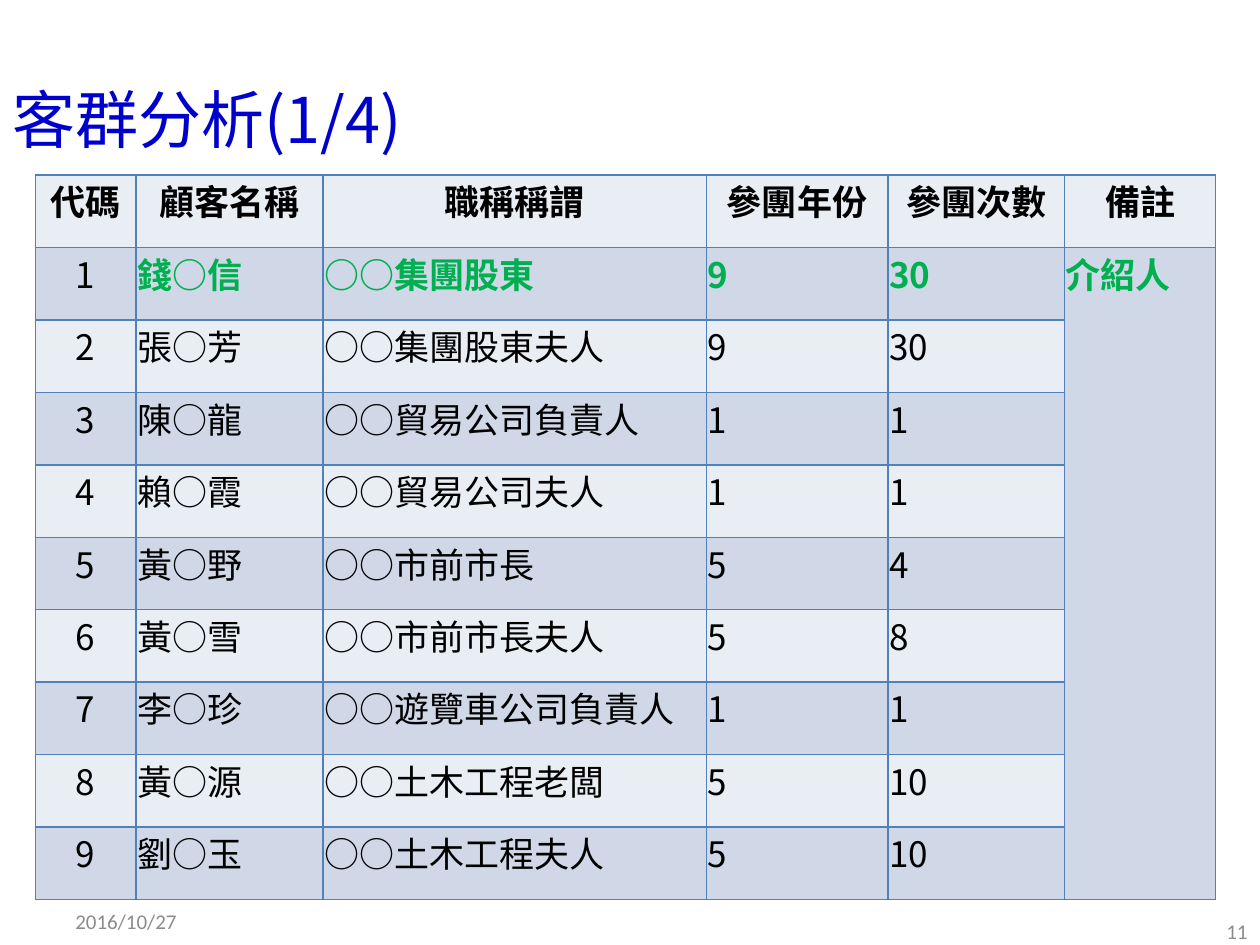
import pptx
import pptx.util
import pptx.dml.color
import pptx.enum.text
import pptx.oxml.ns
import lxml.etree

COLORS = {
    "title": "0000CC",
    "text": "000000",
    "accent": "00B050",
    "footer": "8C8C8C",
    "border": "4F81BD",
    "light": "E9EDF4",
    "dark": "D0D8E8",
}
TITLE_FONT = "Noto Sans CJK SC"
TABLE_FONT = "Noto Sans CJK TC"
FOOTER_FONT = "Calibri"
COLUMN_WIDTHS = [0.8, 1.48, 3.04, 1.44, 1.4, 1.2]
HEADERS = ["代碼", "顧客名稱", "職稱稱謂", "參團年份", "參團次數", "備註"]
CUSTOMERS = [
    ("錢○信", "○○集團股東", "9", "30", "介紹人"),
    ("張○芳", "○○集團股東夫人", "9", "30"),
    ("陳○龍", "○○貿易公司負責人", "1", "1"),
    ("賴○霞", "○○貿易公司夫人", "1", "1"),
    ("黃○野", "○○市前市長", "5", "4"),
    ("黃○雪", "○○市前市長夫人", "5", "8"),
    ("李○珍", "○○遊覽車公司負責人", "1", "1"),
    ("黃○源", "○○土木工程老闆", "5", "10"),
    ("劉○玉", "○○土木工程夫人", "5", "10"),
]
ALIGN = pptx.enum.text.PP_ALIGN
MIDDLE = pptx.enum.text.MSO_ANCHOR.MIDDLE


def share_box(prs, left, top, width, height):
    w, h = prs.slide_width, prs.slide_height
    return int(left * w), int(top * h), int(width * w), int(height * h)


def add_run(tf, text, size, font, color, align, bold=False):
    p = tf.paragraphs[0]
    p.alignment = align
    r = p.add_run()
    r.text = text
    r.font.size = pptx.util.Pt(size)
    r.font.bold = bold
    r.font.color.rgb = pptx.dml.color.RGBColor.from_string(COLORS[color])
    r.font.name = font
    ea = lxml.etree.SubElement(r.font._element, pptx.oxml.ns.qn("a:ea"))
    ea.set("typeface", font)


def add_title(s, box, text):
    sp = s.shapes.title
    sp.left, sp.top, sp.width, sp.height = box
    tf = sp.text_frame
    tf.vertical_anchor = MIDDLE
    add_run(tf, text, 36, TITLE_FONT, "title", ALIGN.LEFT)


def add_footer(s, box, text, align):
    tf = s.shapes.add_textbox(*box).text_frame
    tf.word_wrap = True
    tf.vertical_anchor = MIDDLE
    add_run(tf, text, 12, FOOTER_FONT, "footer", align)


def style_cell(cell, fill):
    cell.margin_left = cell.margin_right = pptx.util.Inches(0.01)
    cell.margin_top = cell.margin_bottom = 0
    tcPr = cell._tc.get_or_add_tcPr()
    qn = pptx.oxml.ns.qn
    for side in ("a:lnL", "a:lnR", "a:lnT", "a:lnB"):
        ln = lxml.etree.SubElement(tcPr, qn(side), w=str(pptx.util.Pt(1)))
        solid = lxml.etree.SubElement(ln, qn("a:solidFill"))
        lxml.etree.SubElement(solid, qn("a:srgbClr"), val=COLORS["border"])
    cell.fill.solid()
    cell.fill.fore_color.rgb = pptx.dml.color.RGBColor.from_string(COLORS[fill])


def add_customer_table(s, box):
    rows = [HEADERS] + [(str(i), *c) for i, c in enumerate(CUSTOMERS, 1)]
    table = s.shapes.add_table(len(rows), len(HEADERS), *box).table
    for column, width in zip(table.columns, COLUMN_WIDTHS):
        column.width = int(box[2] * width / sum(COLUMN_WIDTHS))
    for i, values in enumerate(rows):
        table.rows[i].height = box[3] // len(rows)
        for j in range(len(HEADERS)):
            remark = i > 0 and j == len(HEADERS) - 1
            style_cell(table.cell(i, j), "dark" if i % 2 or remark else "light")
        for j, text in enumerate(values):
            accent = i == 1 and j > 0
            add_run(table.cell(i, j).text_frame, text, 20, TABLE_FONT,
                    "accent" if accent else "text",
                    ALIGN.CENTER if i == 0 or j == 0 else ALIGN.JUSTIFY,
                    bold=i == 0 or accent)
    last = len(HEADERS) - 1
    table.cell(1, last).merge(table.cell(len(rows) - 1, last))


def main():
    prs = pptx.Presentation()
    prs.slide_width = pptx.util.Inches(10)
    prs.slide_height = pptx.util.Inches(7.5)
    s = prs.slides.add_slide(prs.slide_layouts[5])
    add_title(s, share_box(prs, 0, 0.04, 1, 0.17), "客群分析(1/4)")
    add_customer_table(s, (pptx.util.Inches(0.28), pptx.util.Inches(1.39),
                           pptx.util.Inches(9.37), pptx.util.Inches(5.75)))
    add_footer(s, share_box(prs, 0.77, 0.96, 0.23, 0.05), "11", ALIGN.RIGHT)
    add_footer(s, share_box(prs, 0.05, 0.95, 0.23, 0.05), "2016/10/27", ALIGN.LEFT)
    prs.save("out.pptx")


if __name__ == "__main__":
    main()
